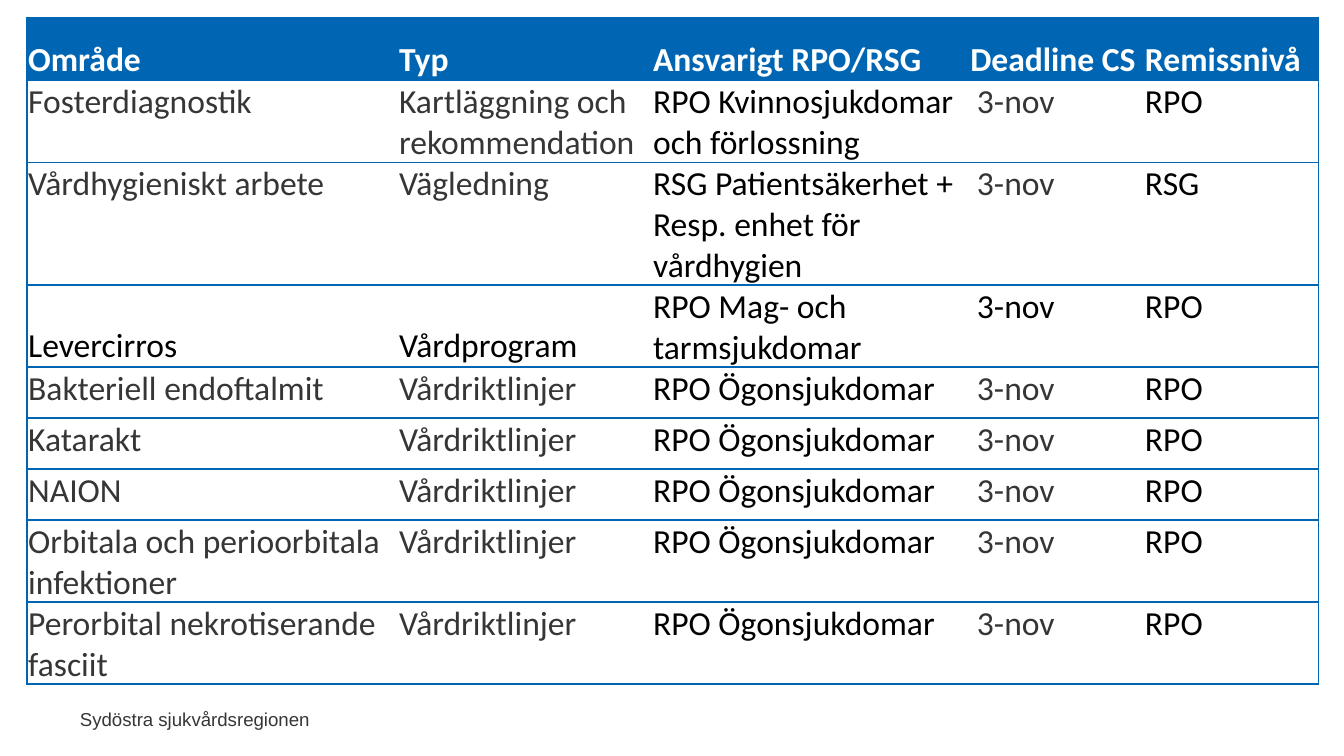
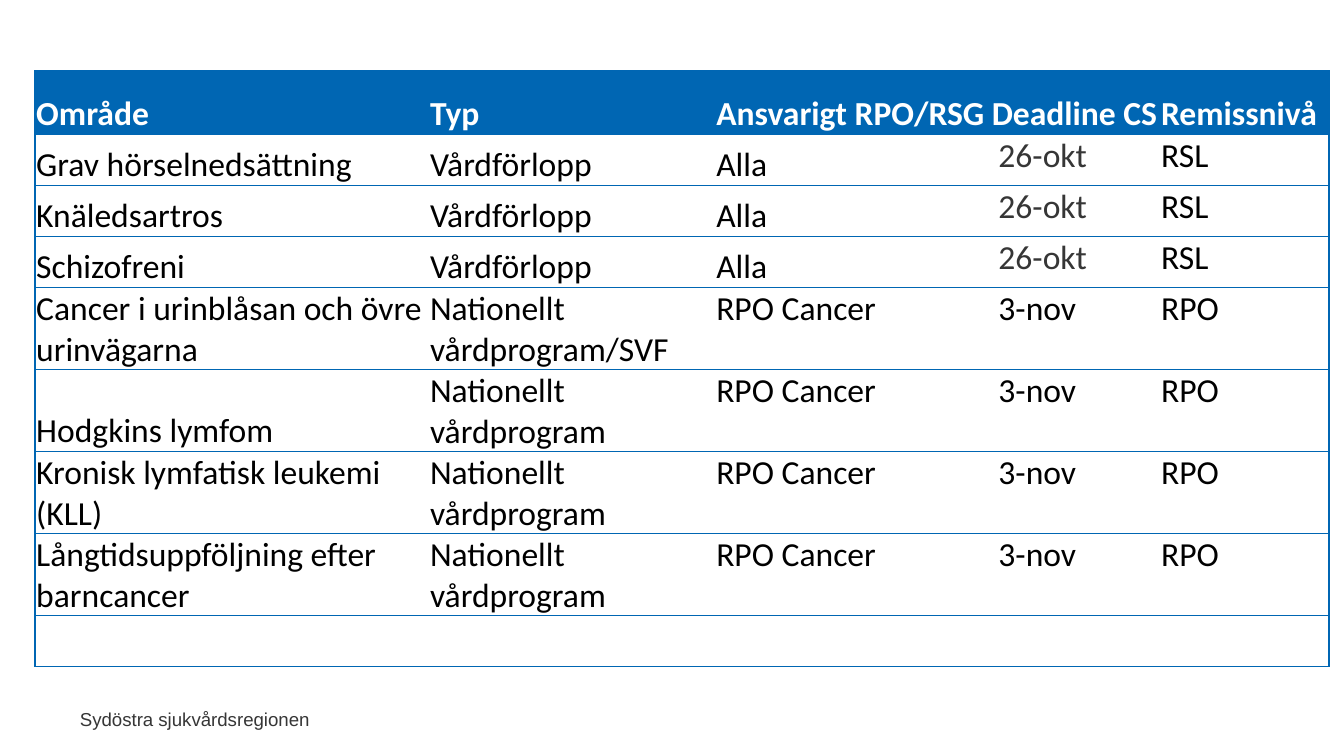
from lxml import etree
from pptx import Presentation
from pptx.dml.color import RGBColor
from pptx.enum import text
from pptx.oxml import ns
from pptx.util import Inches, Pt

COLORS = {"blue": "0066B3", "white": "FFFFFF", "grey": "363636", "black": "000000"}
HEADINGS = ["Område", "Typ", "Ansvarigt RPO/RSG", "Deadline CS", "Remissnivå"]
DEADLINE = HEADINGS.index("Deadline CS")
ROW_STYLES = {
    "heading": {"grey": [], "bottom": [0, 1, 2, 3, 4]},
    "guideline": {"grey": [0, 1, 3], "bottom": []},
    "programme": {"grey": [], "bottom": [0, 1]},
    "pathway": {"grey": [3], "bottom": [0, 1, 2]},
}

eye_topics = [
    "Bakteriell endoftalmit", "Katarakt", "NAION",
    "Orbitala och perioorbitala infektioner", "Perorbital nekrotiserande fasciit",
]
guideline_rows = [
    ("guideline", ["Fosterdiagnostik", "Kartläggning och rekommendation",
                   "RPO Kvinnosjukdomar och förlossning", "3-nov", "RPO"]),
    ("guideline", ["Vårdhygieniskt arbete", "Vägledning",
                   "RSG Patientsäkerhet +\nResp. enhet för vårdhygien", "3-nov", "RSG"]),
    ("programme", ["Levercirros", "Vårdprogram",
                   "RPO Mag- och tarmsjukdomar", "3-nov", "RPO"]),
] + [
    ("guideline", [topic, "Vårdriktlinjer", "RPO Ögonsjukdomar", "3-nov", "RPO"])
    for topic in eye_topics
]

pathway_topics = ["Grav hörselnedsättning", "Knäledsartros", "Schizofreni"]
cancer_topics = [
    ("Cancer i urinblåsan och övre urinvägarna", "Nationellt vårdprogram/SVF"),
    ("Hodgkins lymfom", "Nationellt vårdprogram"),
    ("Kronisk lymfatisk leukemi (KLL)", "Nationellt vårdprogram"),
    ("Långtidsuppföljning efter barncancer", "Nationellt vårdprogram"),
]
pathway_rows = [
    ("pathway", [topic, "Vårdförlopp", "Alla", "26-okt", "RSL"])
    for topic in pathway_topics
] + [
    ("programme", [topic, kind, "RPO Cancer", "3-nov", "RPO"])
    for topic, kind in cancer_topics
] + [("programme", [""] * len(HEADINGS))]

TABLES = [
    ((0.2, 0.13, 9.61, 4.95), [2.76, 1.89, 2.36, 1.3, 1.3], guideline_rows),
    ((0.26, 0.53, 9.63, 4.43), [2.93, 2.13, 2.05, 1.26, 1.26], pathway_rows),
]


def set_font(paragraph, name, size, color, bold=False):
    paragraph.font.name = name
    paragraph.font.size = Pt(size)
    paragraph.font.bold = bold
    paragraph.font.color.rgb = RGBColor.from_string(COLORS[color])


def set_borders(cell, sides):
    properties = cell._tc.get_or_add_tcPr()
    for index, side in enumerate("LRTB"):
        line = etree.Element(ns.qn(f"a:ln{side}"), w=str(Pt(1)))
        if side in sides:
            fill = etree.SubElement(line, ns.qn("a:solidFill"))
            etree.SubElement(fill, ns.qn("a:srgbClr"), val=COLORS["blue"])
        else:
            etree.SubElement(line, ns.qn("a:noFill"))
        properties.insert(index, line)


deck = Presentation()
deck.slide_width = Inches(10)
deck.slide_height = deck.slide_width * 9 // 16

for frame, widths, body_rows in TABLES:
    page = deck.slides.add_slide(deck.slide_layouts[6])

    footer = page.shapes.add_textbox(Inches(0.48), Inches(5.22), Inches(1.92), Inches(0.27))
    footer.text_frame.word_wrap = False
    footer.text_frame.auto_size = text.MSO_AUTO_SIZE.SHAPE_TO_FIT_TEXT
    footer_line = footer.text_frame.paragraphs[0]
    footer_line.text = "Sydöstra sjukvårdsregionen"
    footer_line.alignment = text.PP_ALIGN.RIGHT
    set_font(footer_line, "Arial", 10, "grey")

    rows = [("heading", HEADINGS)] + body_rows
    table = page.shapes.add_table(
        len(rows), len(widths), *[Inches(length) for length in frame]
    ).table
    table.horz_banding = False
    for column, width in zip(table.columns, widths):
        column.width = Inches(width)

    for row_index, (style, values) in enumerate(rows):
        heading = style == "heading"
        rules = ROW_STYLES[style]
        table.rows[row_index].height = Inches(0.47 if heading else 0.38)
        for column_index, value in enumerate(values):
            cell = table.cell(row_index, column_index)
            cell.text = value
            indented = column_index == DEADLINE and not heading
            cell.margin_left = Inches(0.06 if indented else 0.01)
            cell.margin_right = cell.margin_top = Inches(0.01)
            cell.margin_bottom = 0
            at_bottom = column_index in rules["bottom"]
            cell.vertical_anchor = (
                text.MSO_ANCHOR.BOTTOM if at_bottom else text.MSO_ANCHOR.TOP
            )
            cell.fill.solid()
            cell.fill.fore_color.rgb = RGBColor.from_string(
                COLORS["blue" if heading else "white"]
            )
            if heading:
                color = "white"
            else:
                color = "grey" if column_index in rules["grey"] else "black"
            for paragraph in cell.text_frame.paragraphs:
                set_font(paragraph, "Calibri", 18, color, heading)
            outer = {0: "L", len(widths) - 1: "R"}.get(column_index, "")
            set_borders(cell, "TB" + outer)

deck.save("out.pptx")
